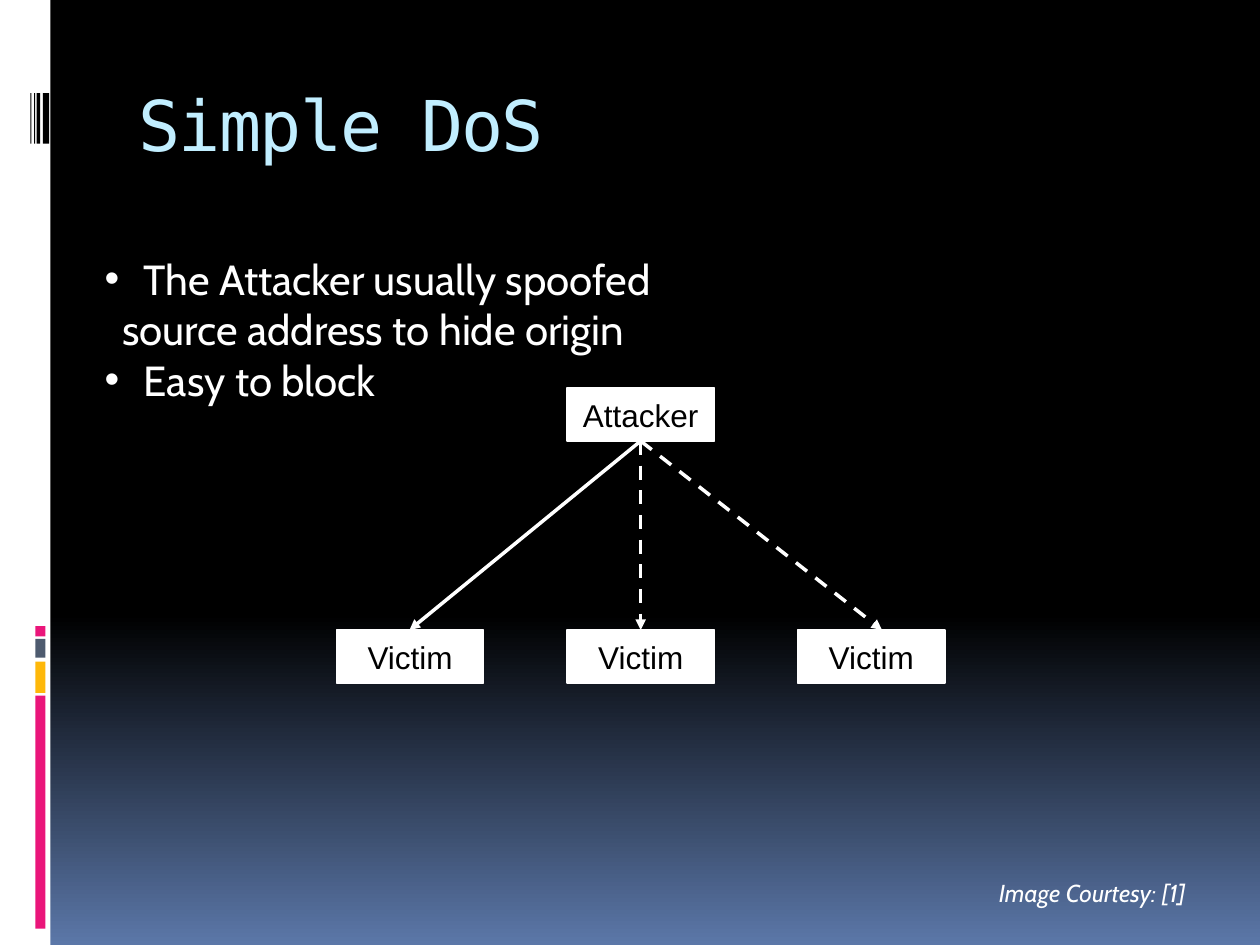
from dataclasses import dataclass

from lxml import etree
from pptx import Presentation
from pptx.dml.color import RGBColor
from pptx.enum.dml import MSO_LINE
from pptx.enum.shapes import MSO_CONNECTOR, MSO_SHAPE
from pptx.enum.text import MSO_ANCHOR, MSO_AUTO_SIZE, PP_ALIGN
from pptx.oxml.ns import qn
from pptx.util import Inches, Pt

RECT = MSO_SHAPE.RECTANGLE
STRAIGHT = MSO_CONNECTOR.STRAIGHT
DASH = MSO_LINE.DASH
TOP, MIDDLE = MSO_ANCHOR.TOP, MSO_ANCHOR.MIDDLE
LEFT, CENTER = PP_ALIGN.LEFT, PP_ALIGN.CENTER
NO_FIT = MSO_AUTO_SIZE.NONE


@dataclass(frozen=True)
class Theme:
    black: str = "000000"
    white: str = "FFFFFF"
    blue: str = "5B77A8"
    sky: str = "C1EEFF"
    pink: str = "EA157A"
    amber: str = "FEB80A"
    slate: str = "4E5B6F"
    title_font: str = "DejaVu Sans Mono"
    body_font: str = "Cabin"
    box_font: str = "Arial"
    title_size: int = 40
    body_size: int = 24
    box_size: int = 18
    credit_size: int = 14


T = Theme()
TITLE = {"name": T.title_font, "size": Pt(T.title_size)}
BODY = {"name": T.body_font, "size": Pt(T.body_size)}
BOX = {"name": T.box_font, "size": Pt(T.box_size)}
CREDIT = {"name": T.body_font, "size": Pt(T.credit_size), "italic": True}


def rgb(color):
    return RGBColor.from_string(color)


def set_attrs(obj, values):
    for name, value in values.items():
        setattr(obj, name, value)


def place(sp, box):
    names = ("left", "top", "width", "height")
    set_attrs(sp, {n: Inches(v) for n, v in zip(names, box)})


def write(p, text, fmt, color):
    r = p.add_run()
    r.text = text
    set_attrs(r.font, fmt)
    r.font.color.rgb = rgb(color)
    return r


def add_rect(s, box, color):
    sp = s.shapes.add_shape(RECT, *map(Inches, box))
    sp.shadow.inherit = False
    sp.fill.solid()
    sp.fill.fore_color.rgb = rgb(color)
    sp.line.fill.background()
    return sp


def add_background(s):
    fill = s.background.fill
    fill.gradient()
    fill.gradient_angle = 270
    stops = ((0.65, T.black), (1, T.blue))
    for stop, (position, color) in zip(fill.gradient_stops, stops):
        stop.position = position
        stop.color.rgb = rgb(color)


def add_sidebar(s, box):
    x, y, _, _ = box
    add_rect(s, box, T.white)
    blocks = ((5.52, 1.85, T.pink), (5.25, 0.25, T.amber),
              (5.07, 0.15, T.slate), (4.97, 0.08, T.pink))
    for top, height, color in blocks:
        add_rect(s, (x + 0.28, y + top, 0.08, height), color)
    for left, width in ((0.34, 0.05), (0.29, 0.03), (0.27, 0.01), (0.24, 0.01)):
        add_rect(s, (x + left, y + 0.74, width, 0.4), T.black)


def add_title(s, box):
    sp = s.shapes.title
    place(sp, box)
    tf = sp.text_frame
    set_attrs(tf, {"vertical_anchor": TOP, "auto_size": NO_FIT,
                   "margin_top": Inches(0.09)})
    p = tf.paragraphs[0]
    p.alignment = LEFT
    r = write(p, "Simple DoS", TITLE, T.sky)
    r.font._element.set("spc", "-100")


def add_bullets(s, box):
    sp = s.placeholders[1]
    place(sp, box)
    tf = sp.text_frame
    set_attrs(tf, {"vertical_anchor": TOP, "auto_size": NO_FIT, "word_wrap": True})
    items = (("The Attacker usually spoofed", True),
             ("source address to hide origin", False),
             ("Easy to block", True))
    for i, (text, bulleted) in enumerate(items):
        p = tf.add_paragraph() if i else tf.paragraphs[0]
        set_attrs(p, {"alignment": LEFT, "space_before": Pt(0)})
        margin = Inches(0.31 if bulleted else 0.14)
        pPr = p._p.get_or_add_pPr()
        pPr.set("marL", str(margin))
        pPr.set("indent", str(-margin if bulleted else 0))
        if bulleted:
            etree.SubElement(pPr, qn("a:buFont")).set("typeface", T.box_font)
            etree.SubElement(pPr, qn("a:buChar")).set("char", "•")
        else:
            etree.SubElement(pPr, qn("a:buNone"))
        write(p, text, BODY, T.white)


def add_node(s, box, text):
    sp = add_rect(s, box, T.white)
    sp.line.color.rgb = rgb(T.white)
    sp.line.width = Pt(0.75)
    tf = sp.text_frame
    set_attrs(tf, {"vertical_anchor": MIDDLE, "word_wrap": False})
    p = tf.paragraphs[0]
    p.alignment = CENTER
    write(p, text, BOX, T.black)


def add_arrow(s, start, end, dash):
    sp = s.shapes.add_connector(STRAIGHT, *map(Inches, (*start, *end)))
    sp.line.color.rgb = rgb(T.white)
    set_attrs(sp.line, {"width": Pt(2), "dash_style": dash})
    etree.SubElement(sp.line._get_or_add_ln(), qn("a:tailEnd")).set("type", "triangle")
    etree.SubElement(sp._element.spPr, qn("a:effectLst"))


def add_attack_diagram(s, box):
    x, y, w, h = box
    node_w, node_h = 1.17, 0.42
    pitch = (w - node_w) / 2
    victim_y = y + h - node_h
    add_node(s, (x + pitch, y, node_w, node_h), "Attacker")
    for i in range(3):
        add_node(s, (x + i * pitch, victim_y, node_w, node_h), "Victim")
    start = (x + w / 2, y + node_h)
    for end_x, dash in ((0.58, None), (w / 2, DASH), (4.33, DASH)):
        add_arrow(s, start, (x + end_x, victim_y), dash)


def add_credit(s, box):
    sp = s.shapes.add_textbox(*map(Inches, box))
    tf = sp.text_frame
    tf.word_wrap = True
    write(tf.paragraphs[0], "Image Courtesy: [1]", CREDIT, T.white)


def main():
    prs = Presentation()
    set_attrs(prs, {"slide_width": Inches(10), "slide_height": Inches(7.5)})
    s = prs.slides.add_slide(prs.slide_layouts[1])
    add_background(s)
    add_sidebar(s, (0, 0, 0.4, 7.5))
    add_title(s, (1, 0.56, 8.5, 1))
    add_bullets(s, (0.73, 1.96, 4.73, 1.31))
    add_attack_diagram(s, (2.67, 3.08, 4.83, 2.34))
    add_credit(s, (7.83, 6.92, 2.42, 0.34))
    prs.save("out.pptx")


if __name__ == "__main__":
    main()
